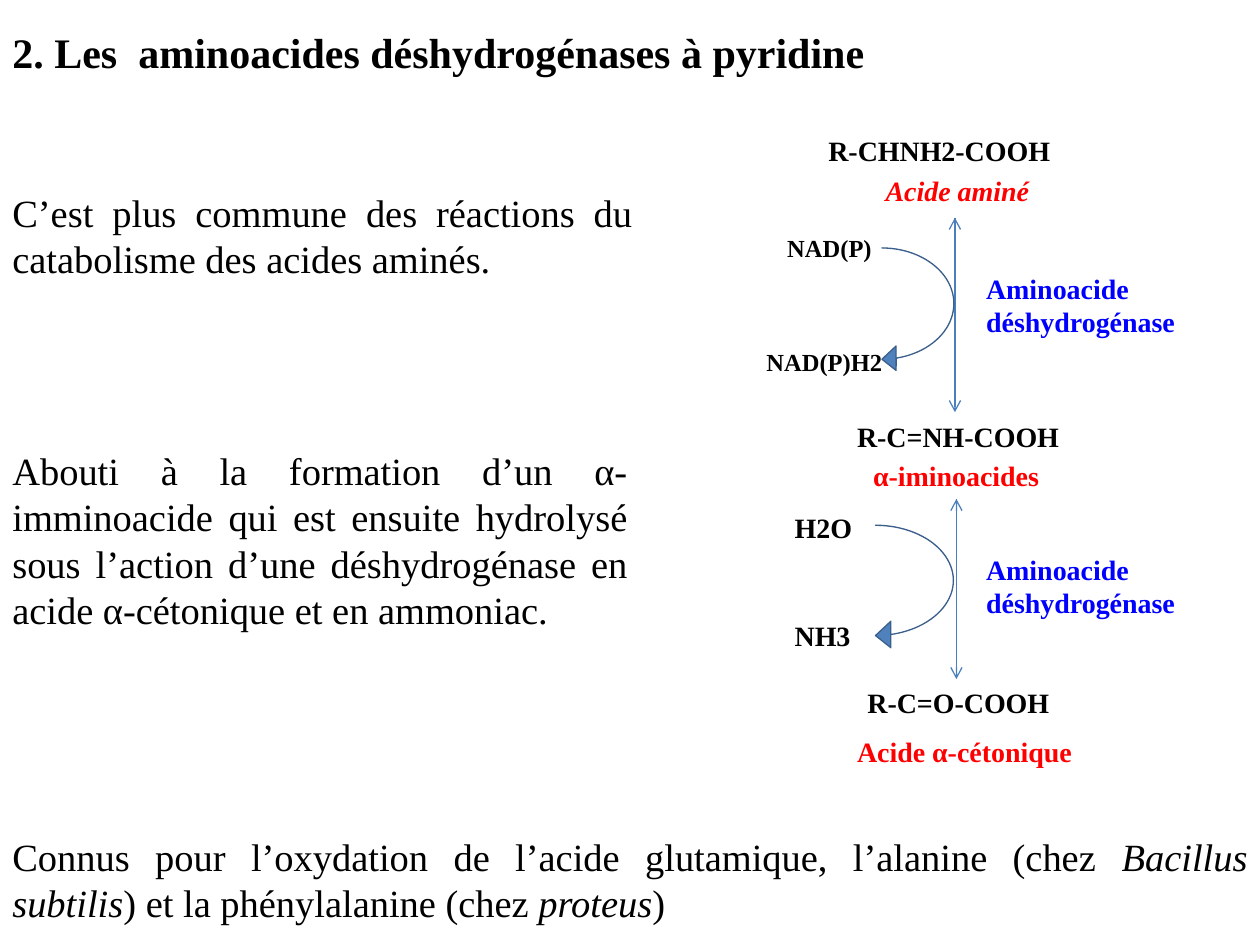
from lxml.etree import SubElement
from pptx import Presentation
from pptx.dml.color import RGBColor
from pptx.enum.shapes import MSO_CONNECTOR, MSO_SHAPE
from pptx.enum.text import MSO_AUTO_SIZE, PP_ALIGN
from pptx.oxml.ns import qn
from pptx.util import Cm, Pt

FONT = "Times New Roman"
COLORS = {
    "text": "000000",
    "compound": "FF0000",
    "enzyme": "0000FF",
    "arrow": "4B7EBC",
    "arc_fill": "4F81BD",
    "arc_line": "3A5F8C",
}


def rgb(name):
    return RGBColor.from_string(COLORS[name])


def add_text(s, box, runs, size, color="text", bold=False,
             align=PP_ALIGN.LEFT, wrap=True):
    """Add a text box; runs is a list of (text, italic) pairs."""
    tf = s.shapes.add_textbox(*map(Cm, box)).text_frame
    tf.word_wrap = wrap
    tf.auto_size = MSO_AUTO_SIZE.SHAPE_TO_FIT_TEXT
    p = tf.paragraphs[0]
    p.alignment = align
    for text, italic in runs:
        r = p.add_run()
        r.text = text
        r.font.name = FONT
        r.font.size = Pt(size)
        r.font.bold = bold
        r.font.italic = italic
        r.font.color.rgb = rgb(color)


def add_arrow(s, x, start, end):
    """Add a vertical arrow pointing at end."""
    line = s.shapes.add_connector(
        MSO_CONNECTOR.STRAIGHT, Cm(x), Cm(start), Cm(x), Cm(end))
    line.line.color.rgb = rgb("arrow")
    line.line.width = Pt(0.75)
    SubElement(line.line._get_or_add_ln(), qn("a:tailEnd"), type="arrow")
    SubElement(line._element.spPr, qn("a:effectLst"))


def add_arc(s, box):
    sp = s.shapes.add_shape(MSO_SHAPE.CURVED_LEFT_ARROW, *map(Cm, box))
    sp.shadow.inherit = False
    sp.fill.solid()
    sp.fill.fore_color.rgb = rgb("arc_fill")
    sp.line.color.rgb = rgb("arc_line")
    sp.line.width = Pt(0.75)
    for i, value in enumerate((0, 0.34, 0.197)):
        sp.adjustments[i] = value


def add_paragraphs(s, left, top, width):
    """Add the title and the three justified paragraphs."""
    add_text(s, (left, top + 0.41, width, 1.27),
             [("2. Les  aminoacides déshydrogénases à pyridine", False)],
             24, bold=True)
    paragraphs = [
        (3.68, 13, 2.13, [("C’est plus commune des réactions du catabolisme "
                           "des acides aminés.", False)]),
        (8.89, 12.9, 4.01, [("Abouti à la formation d’un α-imminoacide qui est "
                             "ensuite hydrolysé sous l’action d’une "
                             "déshydrogénase en acide α-cétonique et en "
                             "ammoniac.", False)]),
        (16.66, width, 2.13, [("Connus pour l’oxydation de l’acide glutamique, "
                               "l’alanine (chez ", False),
                              ("Bacillus subtilis", True),
                              (") et la phénylalanine (chez ", False),
                              ("proteus", True), (")", False)]),
    ]
    for y, w, h, runs in paragraphs:
        add_text(s, (left, top + y, w, h), runs, 22, align=PP_ALIGN.JUSTIFY)


def add_step(s, left, top, axis, length, back, arc, cosubstrates, size):
    """Add one reversible reaction with its cosubstrates and enzyme."""
    add_arrow(s, left + axis, top, top + length)
    add_arrow(s, left + axis, top + back, top)
    x, y, w = arc
    add_arc(s, (left + x, top + y, w, 2.49))
    for text, x, y, w in cosubstrates:
        add_text(s, (left + x, top + y, w, 0.9), [(text, False)], size,
                 bold=True, wrap=False)
    add_text(s, (left + 4.43, top + 0.95, 5.16, 1.63),
             [("Aminoacide déshydrogénase", False)], 16, "enzyme", bold=True)


def add_reaction_scheme(s, left, top):
    compounds = [
        ("R-CHNH2-COOH", 1.21, 0.02, 5.05, "text", False),
        ("Acide aminé ", 2.38, 0.83, 3.58, "compound", True),
        ("R-C=NH-COOH", 1.79, 5.78, 4.65, "text", False),
        ("α-iminoacides", 2.12, 6.57, 3.91, "compound", False),
        ("R-C=O-COOH", 2, 11.14, 4.24, "text", False),
        ("Acide α-cétonique ", 1.79, 12.13, 5.05, "compound", False),
    ]
    for text, x, y, w, color, italic in compounds:
        add_text(s, (left + x, top + y, w, 0.94), [(text, italic)], 16, color,
                 bold=True, align=PP_ALIGN.CENTER, wrap=False)
    add_step(s, left, top + 1.84, 4.05, 3.92, 3.81, (2.58, 0.61, 1.45),
             [("NAD(P)", 0.42, 0.18, 2.24), ("NAD(P)H2", 0, 2.49, 2.87)], 14)
    add_step(s, left, top + 7.51, 4.08, 3.63, 2.84, (2.45, 0.53, 1.57),
             [("H2O", 0.57, 0.1, 1.68), ("NH3", 0.57, 2.28, 1.65)], 16)


def main():
    prs = Presentation()
    prs.slide_width, prs.slide_height = Cm(25.4), Cm(19.05)
    s = prs.slides.add_slide(prs.slide_layouts[6])
    add_paragraphs(s, 0, 0, 25.4)
    add_reaction_scheme(s, 15.2, 2.55)
    prs.save("out.pptx")


if __name__ == "__main__":
    main()
